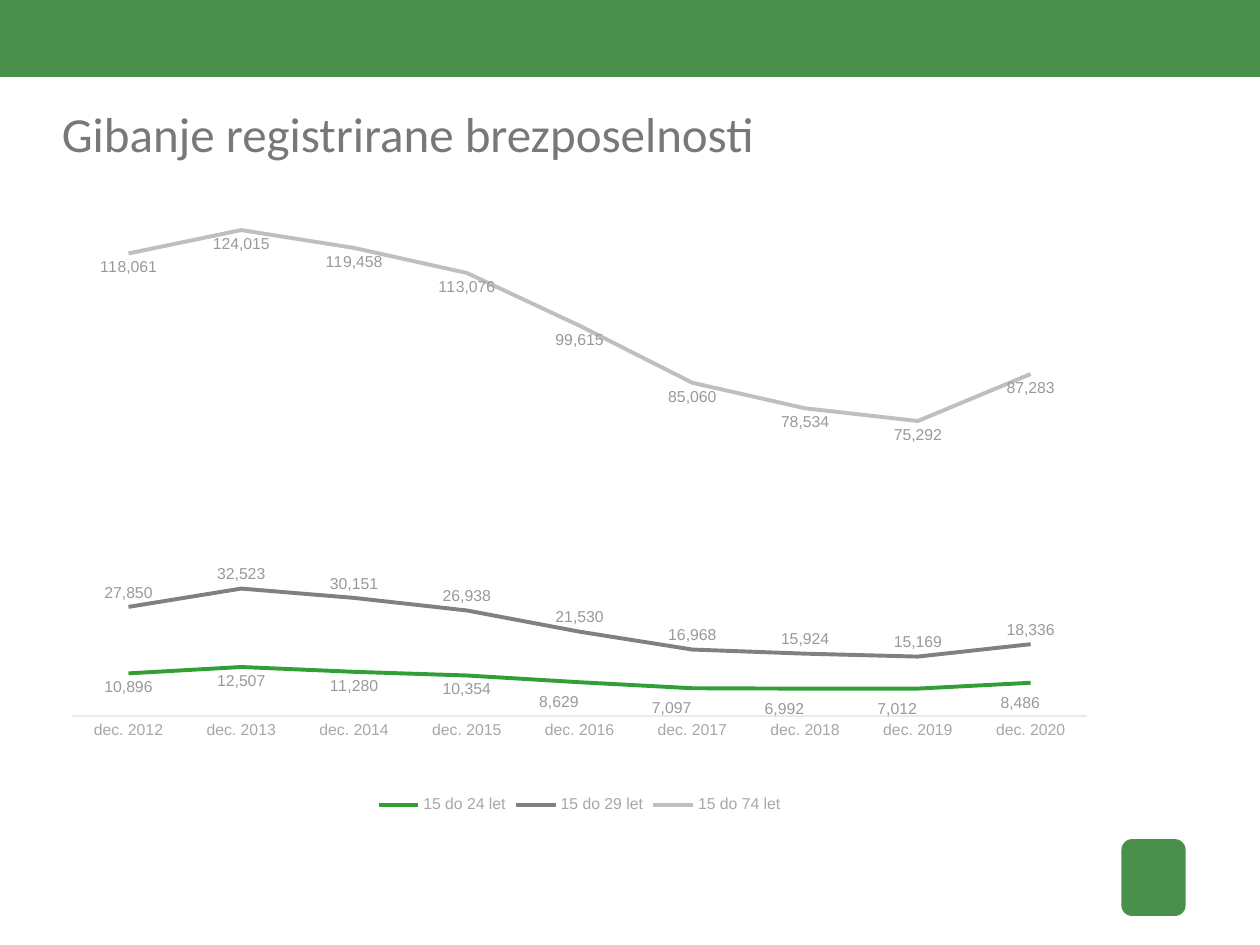
"""Build a slide with a line chart of registered unemployment by age group."""
from lxml import etree
from pptx import Presentation
from pptx.chart.data import CategoryChartData
from pptx.dml.color import RGBColor
from pptx.enum import chart as charts, shapes, text
from pptx.oxml.ns import qn
from pptx.util import Inches, Pt

COLORS = {
    "green": "49904D", "title": "797777", "axis": "EBEBEB",
    "muted": "A8A7A7", "label": "9B9999",
}
TITLE = "Gibanje registrirane brezposelnosti"
CATEGORIES = [f"dec. {year}" for year in range(2012, 2021)]
BELOW = charts.XL_LABEL_POSITION.BELOW
ABOVE = charts.XL_LABEL_POSITION.ABOVE
SERIES = [
    ("15 do 24 let", "339E35", BELOW,
     [10896, 12507, 11280, 10354, 8629, 7097, 6992, 7012, 8486]),
    ("15 do 29 let", "808080", ABOVE,
     [27850, 32523, 30151, 26938, 21530, 16968, 15924, 15169, 18336]),
    ("15 do 74 let", "BFBFBF", BELOW,
     [118061, 124015, 119458, 113076, 99615, 85060, 78534, 75292, 87283]),
]
LABEL_SHIFTS = {4: (-0.02, 0.01), 5: (-0.02, 0.01), 6: (-0.02, 0.01),
                7: (-0.02, 0.01), 8: (-0.01, 0.01)}
PLOT_AREA = {"layoutTarget": "inner", "xMode": "edge", "yMode": "edge",
             "x": 0.01, "y": 0.02, "w": 0.98, "h": 0.81}
NUMBER_FORMAT = "#,##0"


def rgb(value):
    """Return a colour from a name or a hex string."""
    return RGBColor.from_string(COLORS.get(value, value))


def style_font(font, size, color, name="Arial"):
    """Set the size, colour and typeface of a font."""
    font.size, font.name = Pt(size), name
    font.color.rgb = rgb(color)


def add_block(slide, kind, *box):
    """Add a plain green shape."""
    shape = slide.shapes.add_shape(kind, *map(Inches, box))
    shape.shadow.inherit = False
    shape.fill.solid()
    shape.fill.fore_color.rgb = rgb("green")
    shape.line.fill.background()


def manual_layout(values):
    """Return a chart layout element with the given settings."""
    layout = etree.Element(qn("c:layout"))
    manual = etree.SubElement(layout, qn("c:manualLayout"))
    for key, value in values.items():
        etree.SubElement(manual, qn(f"c:{key}")).set("val", str(value))
    return layout


def set_title(slide):
    """Fill and place the title placeholder."""
    title = slide.shapes.title
    title.left, title.top, title.width, title.height = map(
        Inches, (0.49, 0.82, 9.26, 0.71))
    frame = title.text_frame
    frame.margin_left = frame.margin_right = 0
    frame.margin_top = frame.margin_bottom = 0
    frame.vertical_anchor = text.MSO_ANCHOR.TOP
    paragraph = frame.paragraphs[0]
    paragraph.alignment = text.PP_ALIGN.LEFT
    run = paragraph.add_run()
    run.text = TITLE
    style_font(run.font, 28, "title", "Calibri")


def style_axes(chart):
    """Format both axes."""
    category, value = chart.category_axis, chart.value_axis
    for axis in (category, value):
        axis.has_major_gridlines = False
        axis.major_tick_mark = axis.minor_tick_mark = charts.XL_TICK_MARK.NONE
        style_font(axis.tick_labels.font, 9, "muted")
    category.format.line.color.rgb = rgb("axis")
    category.format.line.width = Pt(1.5)
    value.format.line.fill.background()
    value.tick_label_position = charts.XL_TICK_LABEL_POSITION.NONE
    value.minimum_scale, value.maximum_scale = 0, 125000
    value.major_unit = 50000


def style_series(series, color, position):
    """Format a line and its value labels."""
    series.smooth = False
    series.format.line.color.rgb = rgb(color)
    series.format.line.width = Pt(2.25)
    series.marker.style = charts.XL_MARKER_STYLE.NONE
    labels = series.data_labels
    labels.show_value = True
    labels.position = position
    labels.number_format = NUMBER_FORMAT
    labels.number_format_is_linked = False
    style_font(labels.font, 9, "label")


def shift_labels(series):
    """Move single value labels off their default places."""
    for index, (x, y) in LABEL_SHIFTS.items():
        label = series.points[index].data_label
        label.position = BELOW
        style_font(label.font, 9, "label")
    for element in series.data_labels._element.findall(qn("c:dLbl")):
        index = element.find(qn("c:idx"))
        x, y = LABEL_SHIFTS[int(index.get("val"))]
        index.addnext(manual_layout({"x": x, "y": y}))


def add_line_chart(slide):
    """Add the unemployment chart."""
    data = CategoryChartData(number_format=NUMBER_FORMAT)
    data.categories = CATEGORIES
    for name, _, _, values in SERIES:
        data.add_series(name, values)
    chart = slide.shapes.add_chart(
        charts.XL_CHART_TYPE.LINE, *map(Inches, (0.49, 1.7, 8.22, 4.8)), data).chart
    style_font(chart.font, 10, "title")
    chart.has_title = False
    chart.has_legend = True
    chart.legend.position = charts.XL_LEGEND_POSITION.BOTTOM
    chart.legend.include_in_layout = False
    style_font(chart.legend.font, 9, "muted")
    style_axes(chart)
    plot = chart.plots[0]
    plot.vary_by_categories = False
    for series, (_, color, position, _) in zip(plot.series, SERIES):
        style_series(series, color, position)
    shift_labels(plot.series[0])
    area = chart._chartSpace.chart.plotArea
    for layout in area.findall(qn("c:layout")):
        area.remove(layout)
    area.insert(0, manual_layout(PLOT_AREA))


def main():
    """Build and save the presentation."""
    presentation = Presentation()
    presentation.slide_width, presentation.slide_height = Inches(10), Inches(7.5)
    slide = presentation.slides.add_slide(presentation.slide_layouts[5])
    add_block(slide, shapes.MSO_SHAPE.RECTANGLE, 0, -0.01, 10, 0.62)
    add_block(slide, shapes.MSO_SHAPE.ROUNDED_RECTANGLE, 8.9, 6.66, 0.51, 0.61)
    set_title(slide)
    add_line_chart(slide)
    presentation.save("out.pptx")


if __name__ == "__main__":
    main()
